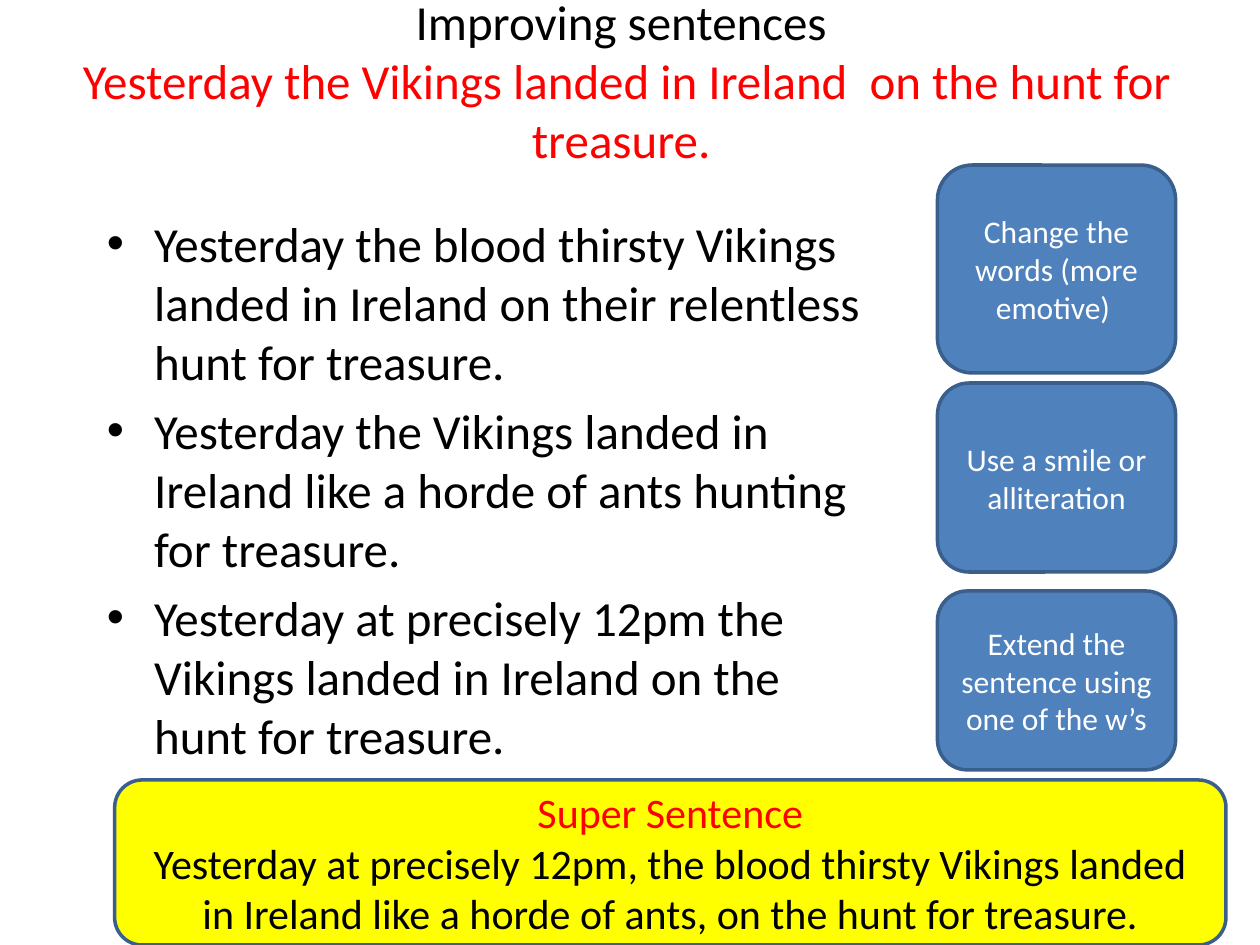
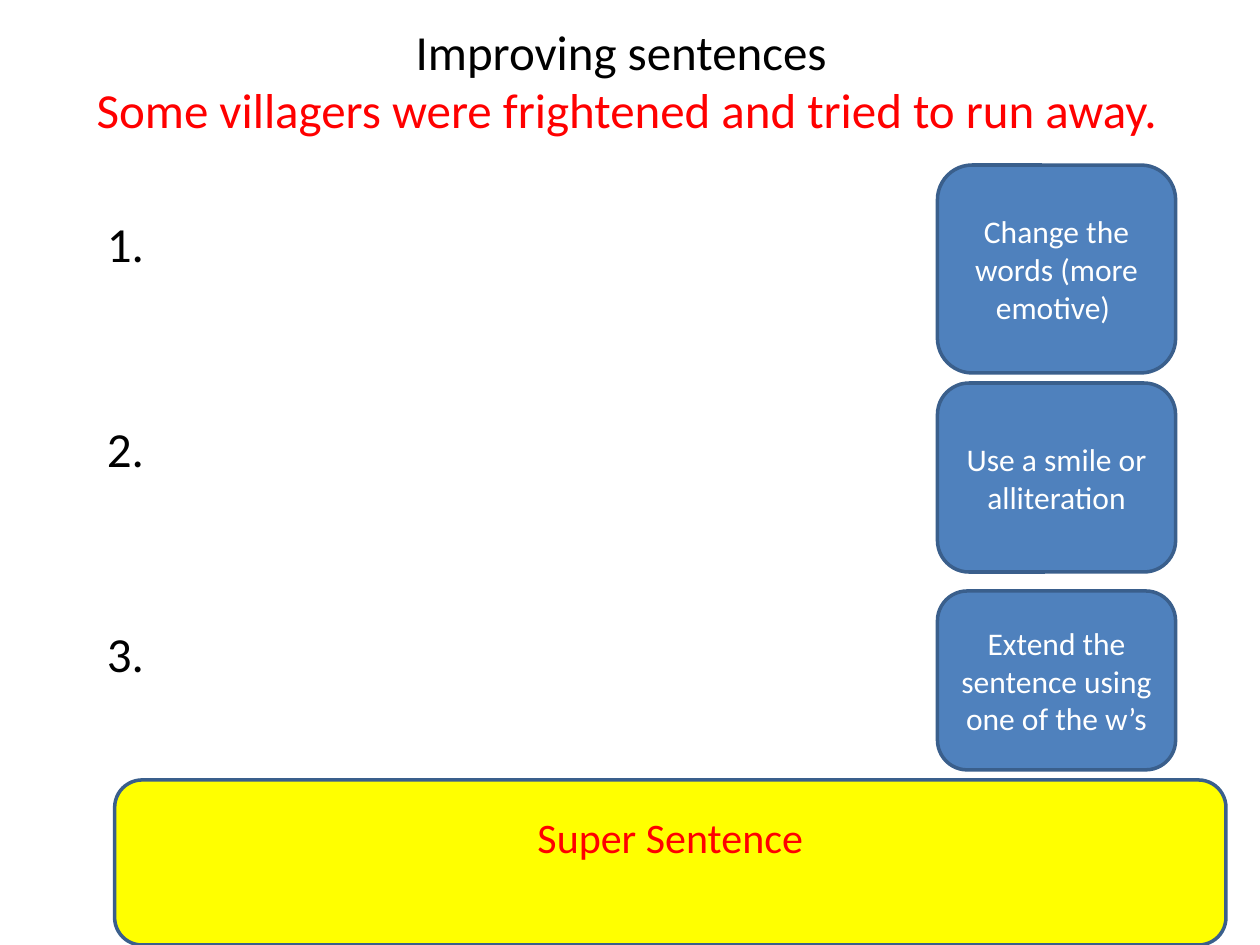
from dataclasses import dataclass

from lxml.etree import SubElement
from pptx import Presentation
from pptx.dml.color import RGBColor as Color
from pptx.enum.shapes import MSO_SHAPE as Shape
from pptx.enum.text import MSO_ANCHOR as Anchor, PP_ALIGN as Align
from pptx.oxml.ns import qn
from pptx.util import Inches, Pt


@dataclass(frozen=True)
class Theme:
    font: str = "Calibri"
    ink: str = "000000"
    accent: str = "FF0000"
    light: str = "FFFFFF"
    tip_fill: str = "4F81BD"
    super_fill: str = "FFFF00"
    outline: str = "3A5F8C"
    body_size: float = 28
    super_size: float = 24
    tip_size: float = 18


THEME = Theme()
CELL = Inches(0.1)
COLUMNS, ROWS = 100, 75
TITLE_BOX = (4.3, 0, 90, 12.7)
BODY_BOX = (7.5, 16.45, 63, 45.3)
SUPER_BOX = (9.1, 61.9, 88.2, 13.1)
TIP_LEFT, TIP_WIDTH = 74.4, 18.9
TIPS = [
    (13.1, 16.5, "Change the words (more emotive) "),
    (30.4, 15, "Use a smile or alliteration"),
    (46.9, 14.2, "Extend the sentence using one of the w’s"),
]
BULLET_INDENT = 3.75
BULLET_GAP, NUMBER_GAP = 6, 83.6
SUPER_LINE = 4.1
INSET = 0.5


def grid(*cells):
    return [round(cell * CELL) for cell in cells]


def write(frame, lines, size, align=Align.LEFT, gap=0):
    frame.word_wrap = True
    for index, (text, color) in enumerate(lines):
        paragraph = frame.add_paragraph() if index else frame.paragraphs[0]
        paragraph.text = text
        paragraph.alignment = align
        paragraph.space_before = Pt(gap if index else 0)
        paragraph.font.name = THEME.font
        paragraph.font.size = Pt(size)
        paragraph.font.color.rgb = Color.from_string(color)


def add_title(slide, sentence):
    frame = slide.shapes.add_textbox(*grid(*TITLE_BOX)).text_frame
    frame.margin_top = frame.margin_bottom = 0
    frame.vertical_anchor = Anchor.MIDDLE
    lines = [("Improving sentences", THEME.ink), (" " + sentence, THEME.accent)]
    write(frame, lines, THEME.body_size, Align.CENTER)


def add_bullet(paragraph):
    properties = paragraph._p.get_or_add_pPr()
    indent = grid(BULLET_INDENT)[0]
    properties.set("marL", str(indent))
    properties.set("indent", str(-indent))
    SubElement(properties, qn("a:buFont")).set("typeface", "Arial")
    SubElement(properties, qn("a:buChar")).set("char", "•")


def add_body(slide, items, gap, bulleted):
    frame = slide.shapes.add_textbox(*grid(*BODY_BOX)).text_frame
    write(frame, [(item, THEME.ink) for item in items], THEME.body_size, gap=gap)
    if bulleted:
        for paragraph in frame.paragraphs:
            add_bullet(paragraph)


def add_card(slide, box, fill, lines, size):
    card = slide.shapes.add_shape(Shape.ROUNDED_RECTANGLE, *grid(*box))
    card.shadow.inherit = False
    card.fill.solid()
    card.fill.fore_color.rgb = Color.from_string(fill)
    card.line.color.rgb = Color.from_string(THEME.outline)
    card.line.width = Pt(2)
    card.text_frame.vertical_anchor = Anchor.MIDDLE
    write(card.text_frame, lines, size, Align.CENTER)
    return card


def add_tips(slide):
    for top, height, text in TIPS:
        box = (TIP_LEFT, top, TIP_WIDTH, height)
        add_card(slide, box, THEME.tip_fill, [(text, THEME.light)], THEME.tip_size)


def add_super_sentence(slide, answer):
    lines = [("Super Sentence", THEME.accent)]
    if answer:
        lines.append((answer, THEME.ink))
    card = add_card(slide, SUPER_BOX, THEME.super_fill, lines, THEME.super_size)
    if not answer:
        card.text_frame.margin_bottom = grid(INSET + SUPER_LINE)[0]


def add_exercise(presentation, sentence, items, gap, bulleted=False, answer=None):
    slide = presentation.slides.add_slide(presentation.slide_layouts[6])
    add_title(slide, sentence)
    add_body(slide, items, gap, bulleted)
    add_tips(slide)
    add_super_sentence(slide, answer)


def main():
    presentation = Presentation()
    presentation.slide_width, presentation.slide_height = grid(COLUMNS, ROWS)
    add_exercise(
        presentation,
        "Yesterday the Vikings landed in Ireland  on the hunt for treasure.",
        [
            "Yesterday the blood thirsty Vikings landed in Ireland on their relentless hunt for treasure.",
            "Yesterday the Vikings landed in Ireland like a horde of ants hunting for treasure.",
            "Yesterday at precisely 12pm the Vikings landed in Ireland on the hunt for treasure.",
        ],
        BULLET_GAP,
        bulleted=True,
        answer="Yesterday at precisely 12pm, the blood thirsty Vikings landed in Ireland "
        "like a horde of ants, on the hunt for treasure.",
    )
    add_exercise(
        presentation,
        "Some villagers were frightened and tried to run away.",
        [f"{number}." for number in range(1, len(TIPS) + 1)],
        NUMBER_GAP,
    )
    presentation.save("out.pptx")


if __name__ == "__main__":
    main()
